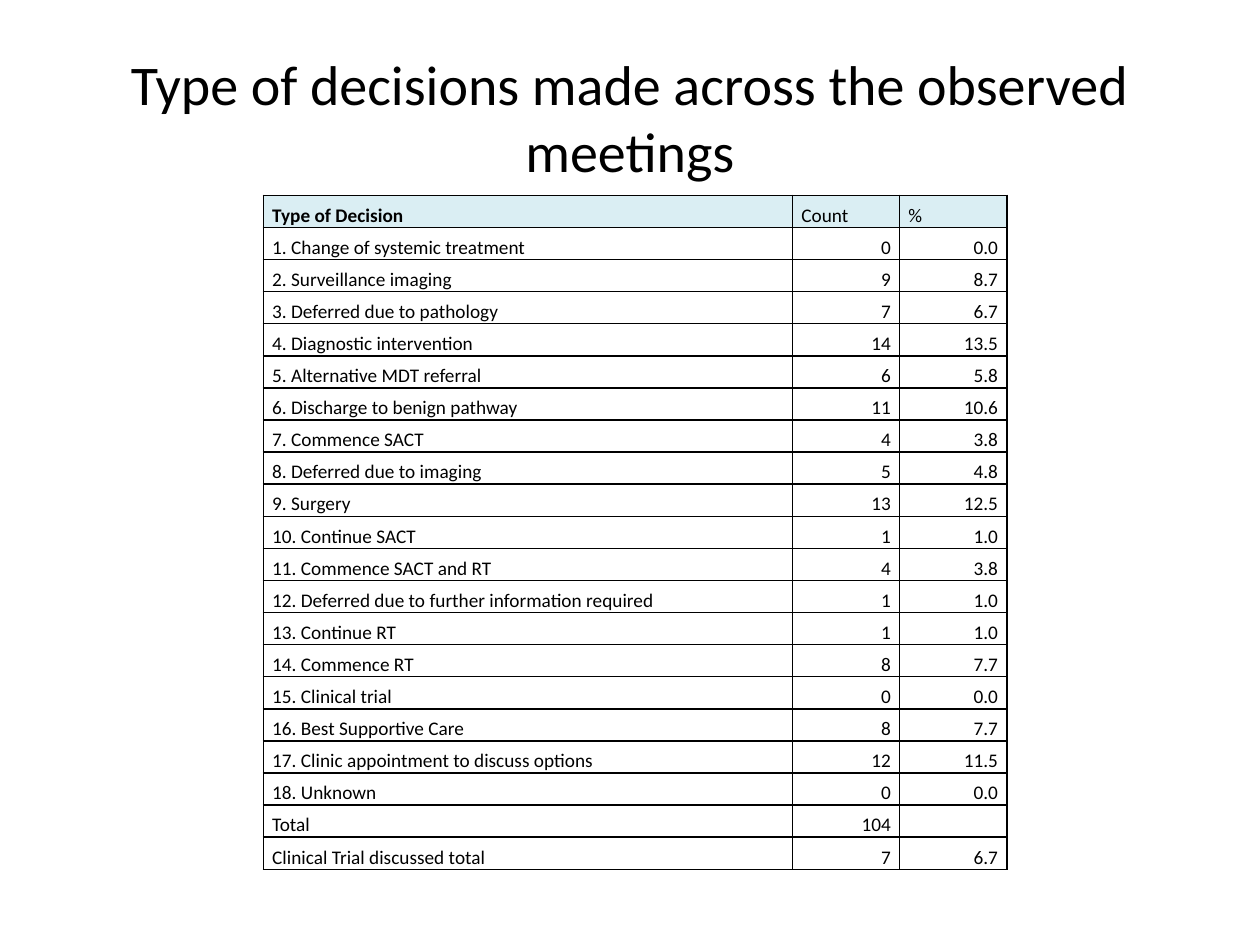
"""Build a slide with a table of decision types across the observed meetings."""
import pptx
import pptx.dml.color
import pptx.enum.text
import pptx.oxml.ns
import pptx.util
from lxml import etree

Inches, Pt = pptx.util.Inches, pptx.util.Pt
Align, Anchor = pptx.enum.text.PP_ALIGN, pptx.enum.text.MSO_ANCHOR
qn = pptx.oxml.ns.qn

TITLE = "Type of decisions made across the observed meetings"
HEAD = ("Type of Decision", "Count", "%")
ROWS = [
    ("1. Change of systemic treatment", "0", "0.0"),
    ("2. Surveillance imaging", "9", "8.7"),
    ("3. Deferred due to pathology", "7", "6.7"),
    ("4. Diagnostic intervention", "14", "13.5"),
    ("5. Alternative MDT referral", "6", "5.8"),
    ("6. Discharge to benign pathway", "11", "10.6"),
    ("7. Commence SACT", "4", "3.8"),
    ("8. Deferred due to imaging", "5", "4.8"),
    ("9. Surgery", "13", "12.5"),
    ("10. Continue SACT", "1", "1.0"),
    ("11. Commence SACT and RT", "4", "3.8"),
    ("12. Deferred due to further information required", "1", "1.0"),
    ("13. Continue RT", "1", "1.0"),
    ("14. Commence RT", "8", "7.7"),
    ("15. Clinical trial", "0", "0.0"),
    ("16. Best Supportive Care", "8", "7.7"),
    ("17. Clinic appointment to discuss options", "12", "11.5"),
    ("18. Unknown", "0", "0.0"),
    ("Total", "104", ""),
    ("Clinical Trial discussed total", "7", "6.7"),
]
WIDTHS = (4.2, 0.85, 0.85)
LEFT, TOP, HEIGHT = 2.09, 1.55, 5.35


def tint(color, code):
    color.rgb = pptx.dml.color.RGBColor.from_string(code)


def write(frame, text, size=11, bold=False, align=Align.LEFT, lines=None):
    para = frame.paragraphs[0]
    para.alignment, para.line_spacing = align, lines
    if not text:
        etree.SubElement(para._p, qn("a:endParaRPr"), sz=str(size * 100))
        return
    run = para.add_run()
    run.text = text
    run.font.name, run.font.size, run.font.bold = "Calibri", Pt(size), bold
    tint(run.font.color, "000000")


def border(cell, code="000000", width=1):
    props = cell._tc.get_or_add_tcPr()
    for spot, side in enumerate(("lnL", "lnR", "lnT", "lnB")):
        line = etree.Element(qn("a:" + side), w=str(Pt(width)))
        fill = etree.SubElement(line, qn("a:solidFill"))
        etree.SubElement(fill, qn("a:srgbClr"), val=code)
        props.insert(spot, line)


def add_title(slide):
    title = slide.shapes.title
    title.left, title.top = Inches(0.5), Inches(0.3)
    title.width, title.height = Inches(9), Inches(1.25)
    title.text_frame.vertical_anchor = Anchor.MIDDLE
    write(title.text_frame, TITLE, size=32, align=Align.CENTER)


def add_grid(slide):
    data = [HEAD] + ROWS
    table = slide.shapes.add_table(
        len(data), len(HEAD), Inches(LEFT), Inches(TOP),
        Inches(sum(WIDTHS)), Inches(HEIGHT)).table
    table.first_row = table.horz_banding = False
    for column, width in zip(table.columns, WIDTHS):
        column.width = Inches(width)
    for r, row in enumerate(data):
        table.rows[r].height = Inches(HEIGHT / len(data))
        for c, text in enumerate(row):
            cell = table.cell(r, c)
            cell.margin_left = cell.margin_right = Inches(0.07)
            cell.margin_top = cell.margin_bottom = 0
            cell.vertical_anchor = Anchor.BOTTOM
            if r == 0:
                cell.fill.solid()
                tint(cell.fill.fore_color, "DAEEF3")
            else:
                cell.fill.background()
            border(cell)
            write(cell.text_frame, text, bold=r == c == 0, lines=1.15,
                  align=Align.RIGHT if r and c else Align.LEFT)


def main():
    deck = pptx.Presentation()
    deck.slide_width, deck.slide_height = Inches(10), Inches(7.5)
    slide = deck.slides.add_slide(deck.slide_layouts[5])
    add_title(slide)
    add_grid(slide)
    deck.save("out.pptx")


if __name__ == "__main__":
    main()
